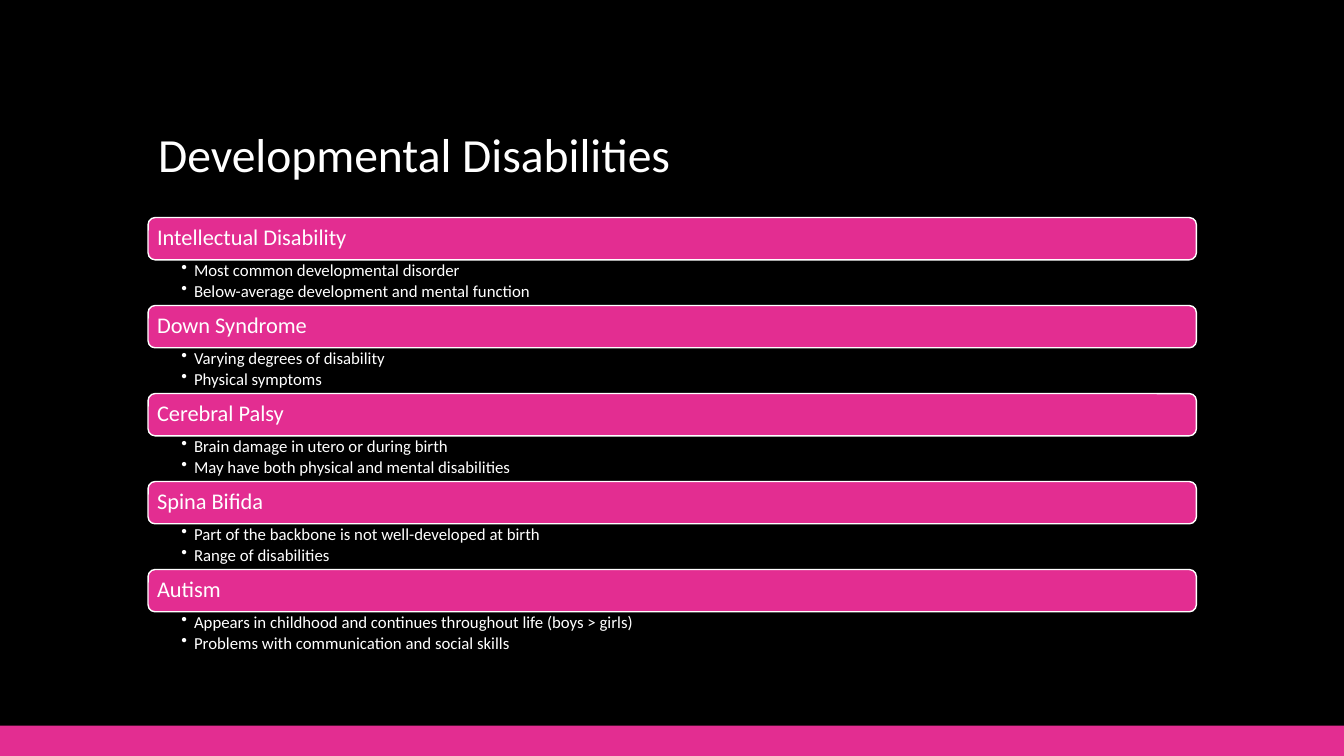
from dataclasses import dataclass

from lxml import etree
from pptx import Presentation
from pptx.dml.color import RGBColor
from pptx.enum.shapes import MSO_SHAPE
from pptx.enum.text import MSO_ANCHOR, MSO_AUTO_SIZE, PP_ALIGN
from pptx.oxml.ns import qn
from pptx.util import Pt

RECTANGLE, ROUNDED = MSO_SHAPE.RECTANGLE, MSO_SHAPE.ROUNDED_RECTANGLE
TOP, MIDDLE, BOTTOM = MSO_ANCHOR.TOP, MSO_ANCHOR.MIDDLE, MSO_ANCHOR.BOTTOM
LEFT = PP_ALIGN.LEFT
NO_AUTOFIT = MSO_AUTO_SIZE.NONE
TITLE_ONLY = 5


@dataclass(frozen=True)
class Theme:
    background: RGBColor = RGBColor(0x00, 0x00, 0x00)
    accent: RGBColor = RGBColor(0xE3, 0x2D, 0x91)
    text: RGBColor = RGBColor(0xFF, 0xFF, 0xFF)
    font: str = "Calibri"
    title_size: float = 34
    heading_size: float = 16
    detail_size: float = 12


THEME = Theme()
SLIDE_WIDTH, SLIDE_HEIGHT = 960, 540
BAND_HEIGHT = 21.6
CONTENT_LEFT, CONTENT_WIDTH = 105.8, 748.8
HEADING_HEIGHT, DETAILS_HEIGHT = 30.2, 32.65

DISABILITIES = {
    "Intellectual Disability": [
        "Most common developmental disorder",
        "Below-average development and mental function",
    ],
    "Down Syndrome": ["Varying degrees of disability", "Physical symptoms"],
    "Cerebral Palsy": [
        "Brain damage in utero or during birth",
        "May have both physical and mental disabilities",
    ],
    "Spina Bifida": [
        "Part of the backbone is not well-developed at birth",
        "Range of disabilities",
    ],
    "Autism": [
        "Appears in childhood and continues throughout life (boys > girls)",
        "Problems with communication and social skills",
    ],
}


def write_lines(frame, lines, size, anchor, margins, space_after=0):
    """Fill a text frame; margins are left, top, right, bottom in points."""
    left, top, right, bottom = margins
    settings = {
        "word_wrap": True, "auto_size": NO_AUTOFIT, "vertical_anchor": anchor,
        "margin_left": Pt(left), "margin_top": Pt(top),
        "margin_right": Pt(right), "margin_bottom": Pt(bottom),
    }
    for name, value in settings.items():
        setattr(frame, name, value)
    frame.text = "\n".join(lines)
    for paragraph in frame.paragraphs:
        paragraph.alignment = LEFT
        paragraph.line_spacing = 0.9
        paragraph.space_after = Pt(space_after)
        font = paragraph.runs[0].font
        font.name, font.size = THEME.font, Pt(size)
        font.color.rgb = THEME.text


def add_bullet(paragraph):
    properties = paragraph._p.get_or_add_pPr()
    properties.set("marL", str(Pt(9)))
    properties.set("indent", str(Pt(-9)))
    etree.SubElement(properties, qn("a:buChar")).set("char", "•")


def add_filled(slide, kind, left, top, width, height):
    shape = slide.shapes.add_shape(kind, Pt(left), Pt(top), Pt(width), Pt(height))
    shape.shadow.inherit = False
    shape.fill.solid()
    shape.fill.fore_color.rgb = THEME.accent
    return shape


def place_title(slide, left, top, width, height):
    title = slide.shapes.title
    title.left, title.top = Pt(left), Pt(top)
    title.width, title.height = Pt(width), Pt(height)
    write_lines(title.text_frame, ["Developmental Disabilities"],
                THEME.title_size, BOTTOM, (7.2, 3.6, 7.2, 3.6))


def add_section(slide, heading, details, left, top, width):
    """Place a heading bar with its bulleted details directly below."""
    bar = add_filled(slide, ROUNDED, left, top, width, HEADING_HEIGHT)
    bar.line.color.rgb = THEME.text
    bar.line.width = Pt(1)
    write_lines(bar.text_frame, [heading], THEME.heading_size, MIDDLE, (5, 3, 5, 3))

    detail_box = slide.shapes.add_textbox(
        Pt(left), Pt(top + HEADING_HEIGHT), Pt(width), Pt(DETAILS_HEIGHT))
    write_lines(detail_box.text_frame, details, THEME.detail_size, TOP,
                (23.8, 1.5, 8.5, 1.5), space_after=1.8)
    for paragraph in detail_box.text_frame.paragraphs:
        add_bullet(paragraph)


def add_sections(slide, left, top, width):
    pitch = HEADING_HEIGHT + DETAILS_HEIGHT
    for index, (heading, details) in enumerate(DISABILITIES.items()):
        add_section(slide, heading, details, left, top + index * pitch, width)


def main():
    presentation = Presentation()
    presentation.slide_width = Pt(SLIDE_WIDTH)
    presentation.slide_height = Pt(SLIDE_HEIGHT)
    slide = presentation.slides.add_slide(presentation.slide_layouts[TITLE_ONLY])
    slide.background.fill.solid()
    slide.background.fill.fore_color.rgb = THEME.background

    band = add_filled(slide, RECTANGLE, 0, SLIDE_HEIGHT - BAND_HEIGHT,
                      SLIDE_WIDTH, BAND_HEIGHT)
    band.line.fill.background()
    place_title(slide, CONTENT_LEFT, 36.7, CONTENT_WIDTH, 97.2)
    add_sections(slide, CONTENT_LEFT, 155.4, CONTENT_WIDTH)
    presentation.save("out.pptx")


if __name__ == "__main__":
    main()
